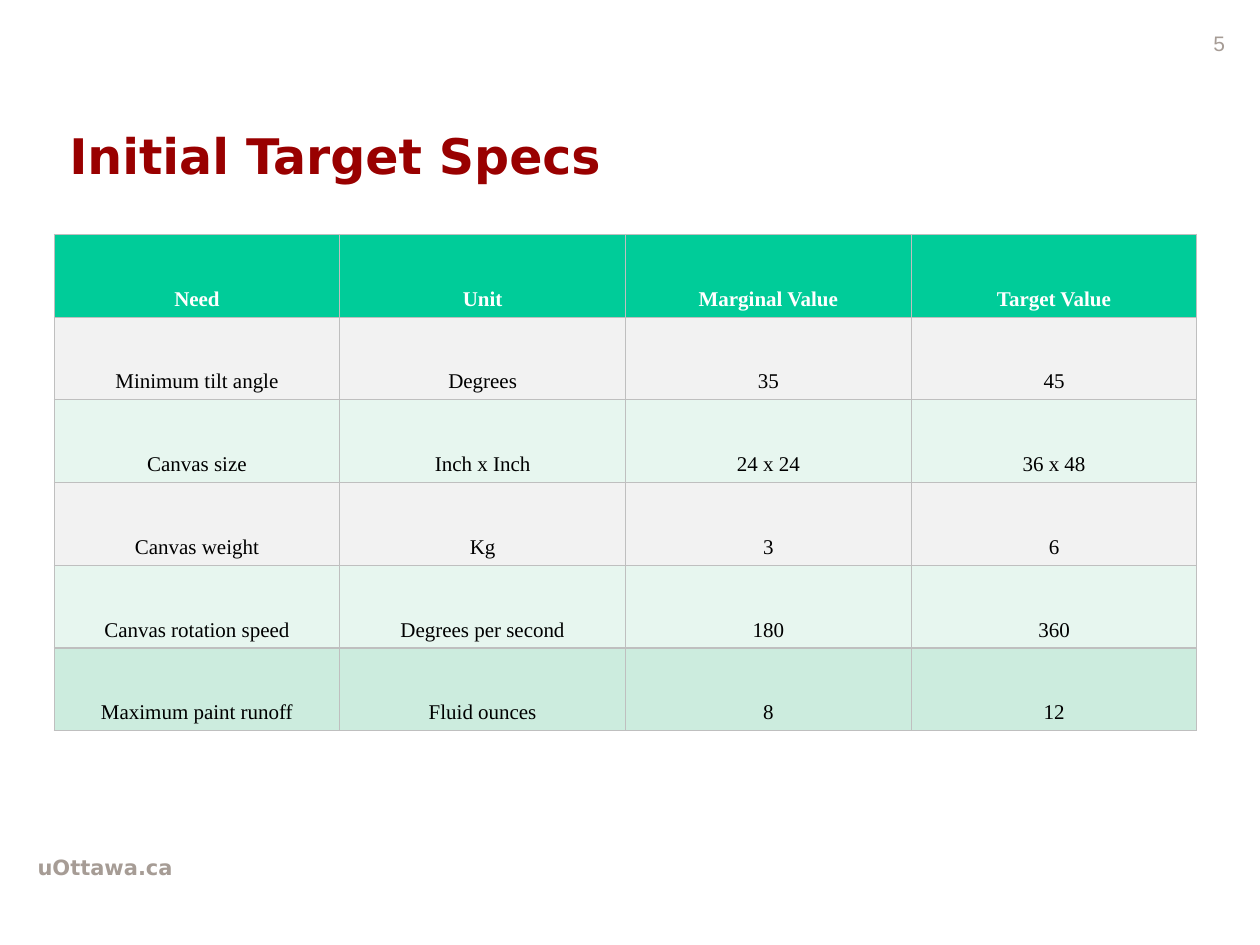
from dataclasses import dataclass

import pptx
import pptx.dml.color
import pptx.enum.text
import pptx.oxml.ns
import pptx.util
from lxml import etree

Inches = pptx.util.Inches
Pt = pptx.util.Pt
RGBColor = pptx.dml.color.RGBColor
Align = pptx.enum.text.PP_ALIGN
Anchor = pptx.enum.text.MSO_ANCHOR
qn = pptx.oxml.ns.qn

WHITE = RGBColor(0xFF, 0xFF, 0xFF)
BLACK = RGBColor(0x00, 0x00, 0x00)
GARNET = RGBColor(0x99, 0x00, 0x00)
TAUPE = RGBColor(0xA6, 0x9C, 0x95)
GREEN = RGBColor(0x00, 0xCC, 0x99)
GREY = RGBColor(0xF2, 0xF2, 0xF2)
PALE_GREEN = RGBColor(0xE7, 0xF6, 0xEF)
MINT = RGBColor(0xCC, 0xEC, 0xDE)
BORDER = RGBColor(0xBF, 0xBF, 0xBF)


@dataclass
class TextStyle:
    font: str
    size: int
    color: RGBColor
    bold: bool = False
    align: Align = Align.LEFT


@dataclass
class SpecRow:
    values: tuple[str, str, str, str]
    fill: RGBColor
    style: TextStyle


@dataclass
class Label:
    text: str
    left: float
    top: float
    width: float
    height: float
    style: TextStyle


TITLE = TextStyle("DejaVu Sans", 28, GARNET, True)
HEADER = TextStyle("Times New Roman", 12, WHITE, True, Align.CENTER)
BODY = TextStyle("Times New Roman", 12, BLACK, False, Align.CENTER)

ROWS = [
    SpecRow(("Need", "Unit", "Marginal Value", "Target Value"), GREEN, HEADER),
    SpecRow(("Minimum tilt angle", "Degrees", "35", "45"), GREY, BODY),
    SpecRow(("Canvas size", "Inch x Inch", "24 x 24", "36 x 48"), PALE_GREEN, BODY),
    SpecRow(("Canvas weight", "Kg", "3", "6"), GREY, BODY),
    SpecRow(("Canvas rotation speed", "Degrees per second", "180", "360"), PALE_GREEN, BODY),
    SpecRow(("Maximum paint runoff", "Fluid ounces", "8", "12"), MINT, BODY),
]

LABELS = [
    Label("uOttawa.ca", 0.2, 6.73, 4.96, 0.39, TextStyle("DejaVu Sans", 12, TAUPE, True)),
    Label("5", 7.49, 0.19, 2.33, 0.4, TextStyle("Arial", 12, TAUPE, align=Align.RIGHT)),
]


def write_text(frame: pptx.text.text.TextFrame, text: str, style: TextStyle) -> None:
    frame.text = text
    frame.word_wrap = True
    para = frame.paragraphs[0]
    para.alignment = style.align
    para.font.name = style.font
    para.font.size = Pt(style.size)
    para.font.bold = style.bold
    para.font.color.rgb = style.color


def add_borders(cell: pptx.table._Cell) -> None:
    properties = cell._tc.get_or_add_tcPr()
    for side in ("a:lnL", "a:lnR", "a:lnT", "a:lnB"):
        line = etree.SubElement(properties, qn(side), w=str(Pt(0.75)))
        fill = etree.SubElement(line, qn("a:solidFill"))
        etree.SubElement(fill, qn("a:srgbClr"), val=str(BORDER))


def add_title(page: pptx.slide.Slide, text: str) -> None:
    title = page.shapes.title
    title.left, title.top = Inches(0.45), Inches(0.76)
    title.width, title.height = Inches(8.5), Inches(0.94)
    write_text(title.text_frame, text, TITLE)
    title.text_frame.vertical_anchor = Anchor.MIDDLE


def add_label(page: pptx.slide.Slide, label: Label) -> None:
    box = page.shapes.add_textbox(
        Inches(label.left), Inches(label.top), Inches(label.width), Inches(label.height)
    )
    write_text(box.text_frame, label.text, label.style)


def add_spec_table(page: pptx.slide.Slide, rows: list[SpecRow]) -> None:
    table = page.shapes.add_table(
        len(rows), len(rows[0].values),
        Inches(0.43), Inches(1.86), Inches(9.07), Inches(3.94),
    ).table
    for table_row, row in zip(table.rows, rows):
        table_row.height = Inches(0.657)
        for cell, value in zip(table_row.cells, row.values):
            write_text(cell.text_frame, value, row.style)
            cell.vertical_anchor = Anchor.BOTTOM
            add_borders(cell)
            cell.fill.solid()
            cell.fill.fore_color.rgb = row.fill


def main() -> None:
    deck = pptx.Presentation()
    deck.slide_width, deck.slide_height = Inches(10), Inches(7.5)
    page = deck.slides.add_slide(deck.slide_layouts[5])
    add_title(page, "Initial Target Specs")
    add_spec_table(page, ROWS)
    for label in LABELS:
        add_label(page, label)
    deck.save("out.pptx")


if __name__ == "__main__":
    main()
